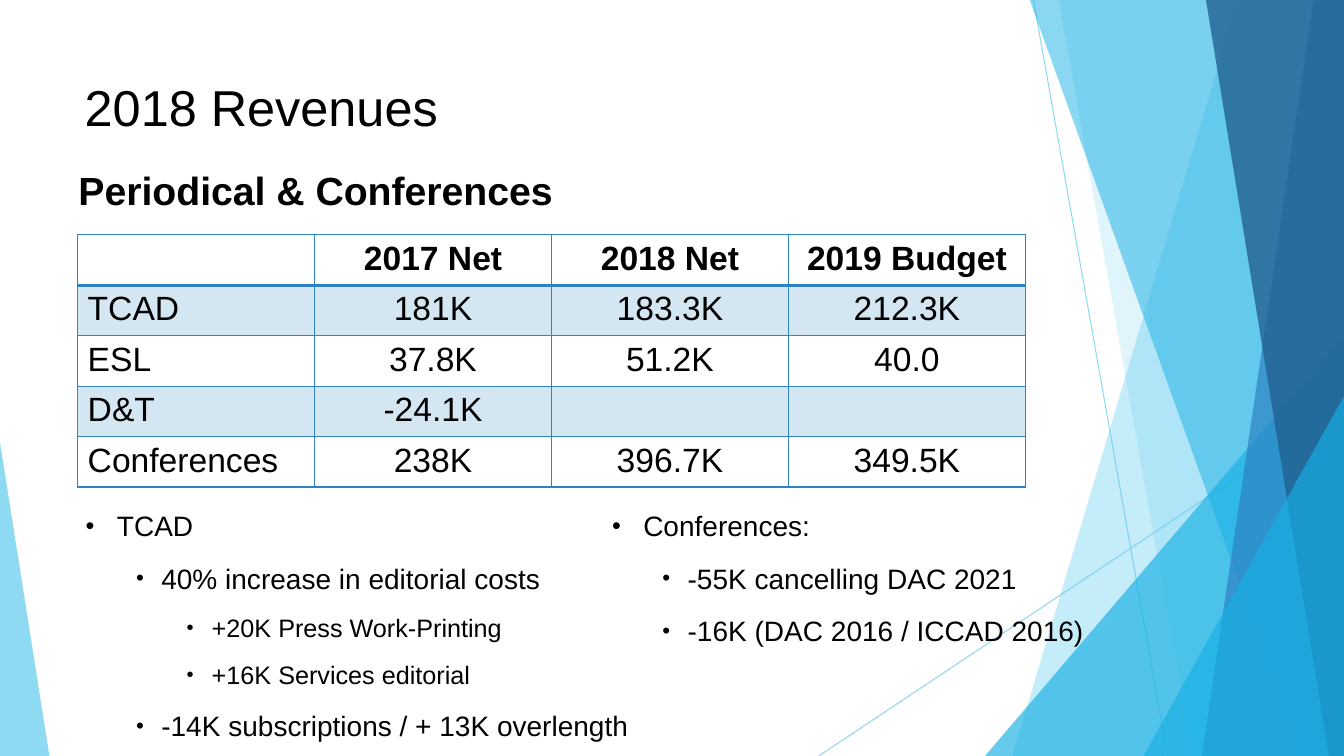
from dataclasses import dataclass

from lxml.etree import SubElement
from pptx import Presentation
from pptx.dml.color import RGBColor
from pptx.enum.shapes import MSO_CONNECTOR, MSO_SHAPE
from pptx.enum.text import MSO_ANCHOR, MSO_AUTO_SIZE, PP_ALIGN
from pptx.oxml.ns import qn
from pptx.util import Inches, Pt


@dataclass(frozen=True)
class Theme:
    font: str = "Arial"
    text: str = "000000"
    sky: str = "5FCBEF"
    cyan: str = "17B0E4"
    blue: str = "2E83C3"
    navy: str = "226292"
    title: int = 36
    heading: int = 28
    table: int = 24
    body: int = 20
    detail: int = 18


THEME = Theme()
WIDTH, HEIGHT = 13.33, 7.5
TOP = -0.01

# Corners left of the right-hand edge: top x, bottom x, colour, opacity
BACK_BANDS = [(12.28, 10.04, THEME.sky, 36), (10.5, 11.83, THEME.sky, 20)]
FRONT_BANDS = [
    (10.21, 12.91, THEME.cyan, 50),
    (13.03, 11.92, THEME.blue, 70),
    (11.96, 13.18, THEME.navy, 80),
]
REVENUES = [
    ["", "2017 Net", "2018 Net", "2019 Budget"],
    ["TCAD", "181K", "183.3K", "212.3K"],
    ["ESL", "37.8K", "51.2K", "40.0"],
    ["D&T", "-24.1K", "", ""],
    ["Conferences", "238K", "396.7K", "349.5K"],
]
TCAD_NOTES = [
    (1, "TCAD"),
    (2, "40% increase in editorial costs"),
    (3, "+20K Press Work-Printing"),
    (3, "+16K Services editorial"),
    (2, "-14K subscriptions / + 13K overlength"),
]
CONFERENCE_NOTES = [
    (1, "Conferences:"),
    (2, "-55K cancelling DAC 2021"),
    (2, "-16K (DAC 2016 / ICCAD 2016)"),
]
# Level: left margin, first-line indent, bullet percent, text size
LIST_LEVELS = {
    1: (0.81, -0.31, 90, THEME.body),
    2: (1.25, -0.25, 80, THEME.body),
    3: (1.75, -0.25, 80, THEME.detail),
}


def add_run(paragraph, text, size, bold=False):
    run = paragraph.add_run()
    run.text = text
    run.font.name = THEME.font
    run.font.size = Pt(size)
    run.font.bold = bold
    run.font.color.rgb = RGBColor.from_string(THEME.text)


def set_opacity(properties, percent):
    """Make the first colour inside a properties element translucent."""
    colour = next(properties.iter(qn("a:srgbClr")))
    SubElement(colour, qn("a:alpha"), val=str(percent * 1000))


def place(shape, left, top, width, height):
    shape.left, shape.top = Inches(left), Inches(top)
    shape.width, shape.height = Inches(width), Inches(height)


def paint(shape, colour, opacity):
    shape.shadow.inherit = False
    shape.line.fill.background()
    shape.fill.solid()
    shape.fill.fore_color.rgb = RGBColor.from_string(colour)
    set_opacity(shape.element.spPr, opacity)


def add_ray(group, start, end):
    ray = group.shapes.add_connector(
        MSO_CONNECTOR.STRAIGHT, *(Inches(value) for value in start + end))
    ray.line.width = Pt(0.75)
    ray.line.color.rgb = RGBColor.from_string(THEME.sky)
    set_opacity(ray.element.spPr, 70)
    SubElement(ray.element.spPr, qn("a:effectLst"))


def add_band(group, top_x, bottom_x, colour, opacity):
    """Add a band from a slanted left side to the right edge of the slide."""
    corners = [(WIDTH, TOP), (WIDTH, HEIGHT), (bottom_x, HEIGHT)]
    builder = group.shapes.build_freeform(Inches(top_x), Inches(TOP))
    builder.add_line_segments([(Inches(x), Inches(y)) for x, y in corners])
    paint(builder.convert_to_shape(), colour, opacity)


def add_triangle(group, box, apex, colour, opacity):
    triangle = group.shapes.add_shape(
        MSO_SHAPE.ISOSCELES_TRIANGLE, *(Inches(value) for value in box))
    triangle.adjustments[0] = apex
    paint(triangle, colour, opacity)


def add_backdrop(slide):
    """Draw the translucent facets behind everything else."""
    group = slide.shapes.add_group_shape()
    add_ray(group, (10.25, 0), (11.58, HEIGHT))
    add_ray(group, (WIDTH, 4.03), (8.12, HEIGHT))
    for band in BACK_BANDS:
        add_band(group, *band)
    add_triangle(group, (9.77, 3.33, 3.56, 4.17), 1, THEME.cyan, 66)
    for band in FRONT_BANDS:
        add_band(group, *band)
    add_triangle(group, (11.34, 3.93, 1.99, 3.57), 1, THEME.cyan, 66)
    add_triangle(group, (0, 4.39, 0.49, 3.11), 0, THEME.sky, 70)
    group.element.getparent().insert(2, group.element)


def fill_title(title, box, text):
    place(title, *box)
    frame = title.text_frame
    frame.auto_size = MSO_AUTO_SIZE.NONE
    frame.vertical_anchor = MSO_ANCHOR.MIDDLE
    frame.paragraphs[0].alignment = PP_ALIGN.LEFT
    add_run(frame.paragraphs[0], text, THEME.title)


def add_heading(slide, box, text):
    heading = slide.shapes.add_textbox(*(Inches(value) for value in box))
    heading.text_frame.word_wrap = False
    heading.text_frame.auto_size = MSO_AUTO_SIZE.SHAPE_TO_FIT_TEXT
    add_run(heading.text_frame.paragraphs[0], text, THEME.heading, bold=True)


def add_borders(cell_properties, is_header, below_header):
    for side in "LRTB":
        thick = (is_header and side == "B") or (below_header and side == "T")
        line = SubElement(cell_properties, qn(f"a:ln{side}"),
                          w=str(Pt(2 if thick else 1)))
        fill = SubElement(line, qn("a:solidFill"))
        SubElement(fill, qn("a:srgbClr"), val=THEME.blue)


def add_revenue_table(slide, left, top, column_width, row_height):
    rows, columns = len(REVENUES), len(REVENUES[0])
    table = slide.shapes.add_table(
        rows, columns, Inches(left), Inches(top),
        Inches(column_width * columns), Inches(row_height * rows)).table
    for row_index, values in enumerate(REVENUES):
        table.rows[row_index].height = Inches(row_height)
        for column_index, value in enumerate(values):
            cell = table.cell(row_index, column_index)
            properties = cell._tc.get_or_add_tcPr()
            add_borders(properties, row_index == 0, row_index == 1)
            if row_index % 2:
                cell.fill.solid()
                cell.fill.fore_color.rgb = RGBColor.from_string(THEME.blue)
                set_opacity(properties.find(qn("a:solidFill")), 20)
            else:
                cell.fill.background()
            paragraph = cell.text_frame.paragraphs[0]
            if column_index:
                paragraph.alignment = PP_ALIGN.CENTER
            if value:
                add_run(paragraph, value, THEME.table, bold=row_index == 0)


def fill_list(body, box, items):
    place(body, *box)
    frame = body.text_frame
    frame.auto_size = MSO_AUTO_SIZE.NONE
    frame.vertical_anchor = MSO_ANCHOR.TOP
    for index, (level, text) in enumerate(items):
        margin, indent, bullet_percent, size = LIST_LEVELS[level]
        paragraph = frame.add_paragraph() if index else frame.paragraphs[0]
        paragraph.level = level
        paragraph.line_spacing = 1.5
        paragraph.space_before = Pt(1.5 if index else 0)
        properties = paragraph._p.get_or_add_pPr()
        properties.set("marL", str(Inches(margin)))
        properties.set("indent", str(Inches(indent)))
        SubElement(properties, qn("a:buSzPct"), val=str(bullet_percent * 1000))
        SubElement(properties, qn("a:buFont"), typeface=THEME.font)
        SubElement(properties, qn("a:buChar"), char="•")
        add_run(paragraph, text, size)


def build_revenue_slide(presentation):
    slide = presentation.slides.add_slide(presentation.slide_layouts[3])
    title, left_list, right_list = slide.placeholders
    add_backdrop(slide)
    fill_title(title, (0.74, 0.67, 9.4, 0.78), "2018 Revenues")
    add_heading(slide, (0.68, 1.6, 4.97, 0.57), "Periodical & Conferences")
    add_revenue_table(slide, 0.77, 2.33, 2.35, 0.47)
    fill_list(left_list, (0.25, 4.83, 6.27, 2.16), TCAD_NOTES)
    fill_list(right_list, (5.47, 4.83, 6.27, 1.67), CONFERENCE_NOTES)


def main():
    presentation = Presentation()
    presentation.slide_width = Inches(WIDTH)
    presentation.slide_height = Inches(HEIGHT)
    build_revenue_slide(presentation)
    presentation.save("out.pptx")


if __name__ == "__main__":
    main()
